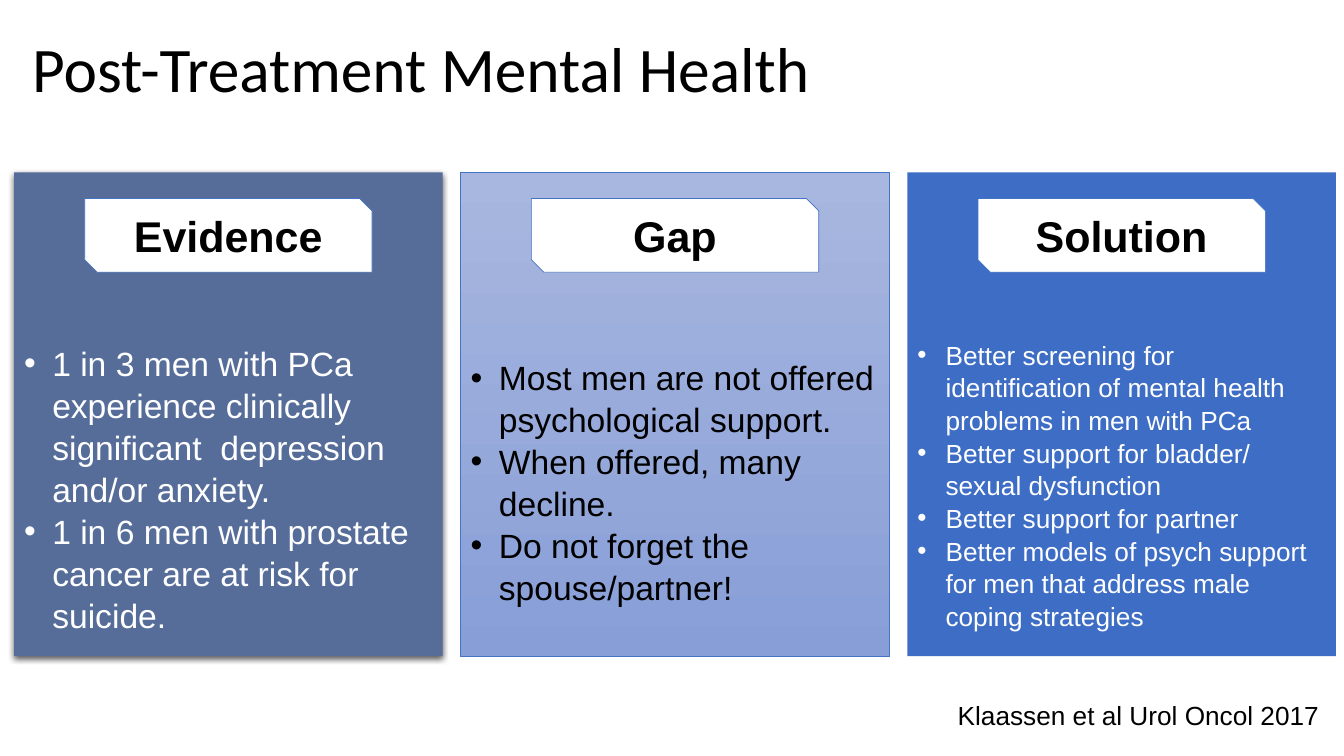
from lxml import etree
from pptx import Presentation
from pptx import util as u
from pptx.dml import color
from pptx.enum import shapes, text
from pptx.oxml import ns

HUES = {"ink": "000000", "white": "FFFFFF", "slate": "566D9A", "pale": "A8B7DF",
        "mist": "889ED7", "blue": "3D6DC5", "edge": "4472C4"}

COLUMNS = [
    {"head": "Evidence", "fill": ["slate"], "ink": "white", "size": 24, "drop": 1.68,
     "shade": True,
     "items": ["1 in 3 men with PCa experience clinically significant  depression and/or anxiety.",
               "1 in 6 men with prostate cancer are at risk for suicide."]},
    {"head": "Gap", "fill": ["pale", "mist"], "ink": "ink", "size": 24, "drop": 1.82,
     "line": "edge",
     "items": ["Most men are not offered psychological support.",
               "When offered, many decline.",
               "Do not forget the spouse/partner!"]},
    {"head": "Solution", "fill": ["blue"], "ink": "white", "size": 18.7, "drop": 1.64,
     "items": ["Better screening for identification of mental health problems in men with PCa",
               "Better support for bladder/ sexual dysfunction",
               "Better support for partner",
               "Better models of psych support for men that address male coping strategies"]},
]


def hue(name):
    return color.RGBColor.from_string(HUES[name])


def style(thing, values):
    for key, value in values.items():
        setattr(thing, key, value)


def write(para, words, size, ink, face="Arial", bold=False):
    para.text = words
    style(para.font, {"size": u.Pt(size), "name": face, "bold": bold})
    para.font.color.rgb = hue(ink)


def block(slide, kind, box, fill, line=None):
    shape = slide.shapes.add_shape(kind, *map(u.Inches, box))
    shape.shadow.inherit = False
    if len(fill) == 1:
        shape.fill.solid()
        shape.fill.fore_color.rgb = hue(fill[0])
    else:
        shape.fill.gradient()
        shape.fill.gradient_angle = 270
        for stop, name in zip(shape.fill.gradient_stops, fill):
            stop.color.rgb = hue(name)
    if line:
        shape.line.color.rgb = hue(line)
        shape.line.width = u.Pt(0.5)
    else:
        shape.line.fill.background()
    return shape


def shade(shape):
    effects = shape.element.spPr.find(ns.qn("a:effectLst"))
    outer = etree.SubElement(effects, ns.qn("a:outerShdw"), blurRad=str(u.Pt(4.5)),
                             dist=str(u.Pt(1.5)), dir="5400000", rotWithShape="0")
    tint = etree.SubElement(outer, ns.qn("a:srgbClr"), val=HUES["ink"])
    etree.SubElement(tint, ns.qn("a:alpha"), val="63000")


def bullet(para):
    props = para._p.get_or_add_pPr()
    props.set("marL", str(u.Inches(0.28)))
    props.set("indent", str(u.Inches(-0.28)))
    etree.SubElement(props, ns.qn("a:buFont"), typeface="Arial")
    etree.SubElement(props, ns.qn("a:buChar"), char="•")


def column(slide, box, data):
    left, top, width, height = box
    panel = block(slide, shapes.MSO_SHAPE.RECTANGLE, box, data["fill"], data.get("line"))
    if data.get("shade"):
        shade(panel)
    frame = panel.text_frame
    style(frame, {"word_wrap": True, "vertical_anchor": text.MSO_ANCHOR.TOP,
                  "margin_top": u.Inches(data["drop"])})
    for index, words in enumerate(data["items"]):
        para = frame.add_paragraph() if index else frame.paragraphs[0]
        bullet(para)
        style(para, {"alignment": text.PP_ALIGN.LEFT, "line_spacing": 1.04})
        write(para, words, data["size"], data["ink"])

    wide = 2.85
    label = block(slide, shapes.MSO_SHAPE.SNIP_2_DIAG_RECTANGLE,
                  (left + (width - wide) / 2, top + 0.26, wide, 0.73), ["white"], "edge")
    label.text_frame.vertical_anchor = text.MSO_ANCHOR.MIDDLE
    para = label.text_frame.paragraphs[0]
    para.alignment = text.PP_ALIGN.CENTER
    write(para, data["head"], 30.7, "ink", bold=True)


def title(slide, box):
    frame = slide.shapes.add_textbox(*map(u.Inches, box)).text_frame
    style(frame, {"word_wrap": True, "vertical_anchor": text.MSO_ANCHOR.MIDDLE})
    para = frame.paragraphs[0]
    para.line_spacing = 0.9
    write(para, "Post-Treatment Mental Health", 45.3, "ink", "Calibri")


def source(slide, box):
    frame = slide.shapes.add_textbox(*map(u.Inches, box)).text_frame
    style(frame, {"word_wrap": False, "auto_size": text.MSO_AUTO_SIZE.SHAPE_TO_FIT_TEXT})
    write(frame.paragraphs[0], "Klaassen et al Urol Oncol 2017", 18.7, "ink")


def main():
    deck = Presentation()
    style(deck, {"slide_width": u.Inches(13.33), "slide_height": u.Inches(7.5)})
    slide = deck.slides.add_slide(deck.slide_layouts[6])
    title(slide, (0.22, 0.09, 12.89, 1.25))
    for index, data in enumerate(COLUMNS):
        column(slide, (0.14 + 4.43 * index, 1.71, 4.25, 4.8), data)
    source(slide, (9.4, 6.89, 3.81, 0.42))
    deck.save("out.pptx")


if __name__ == "__main__":
    main()
